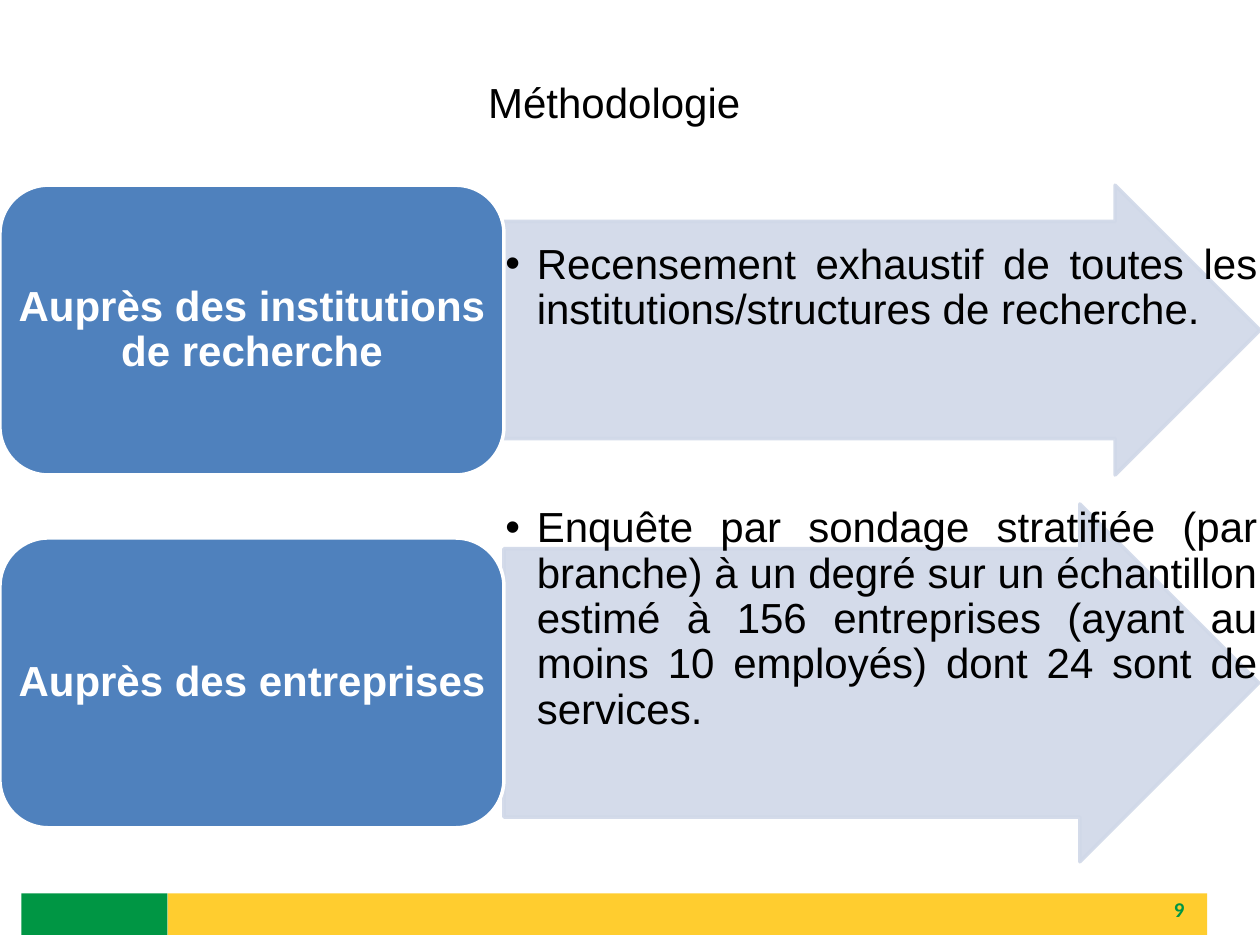
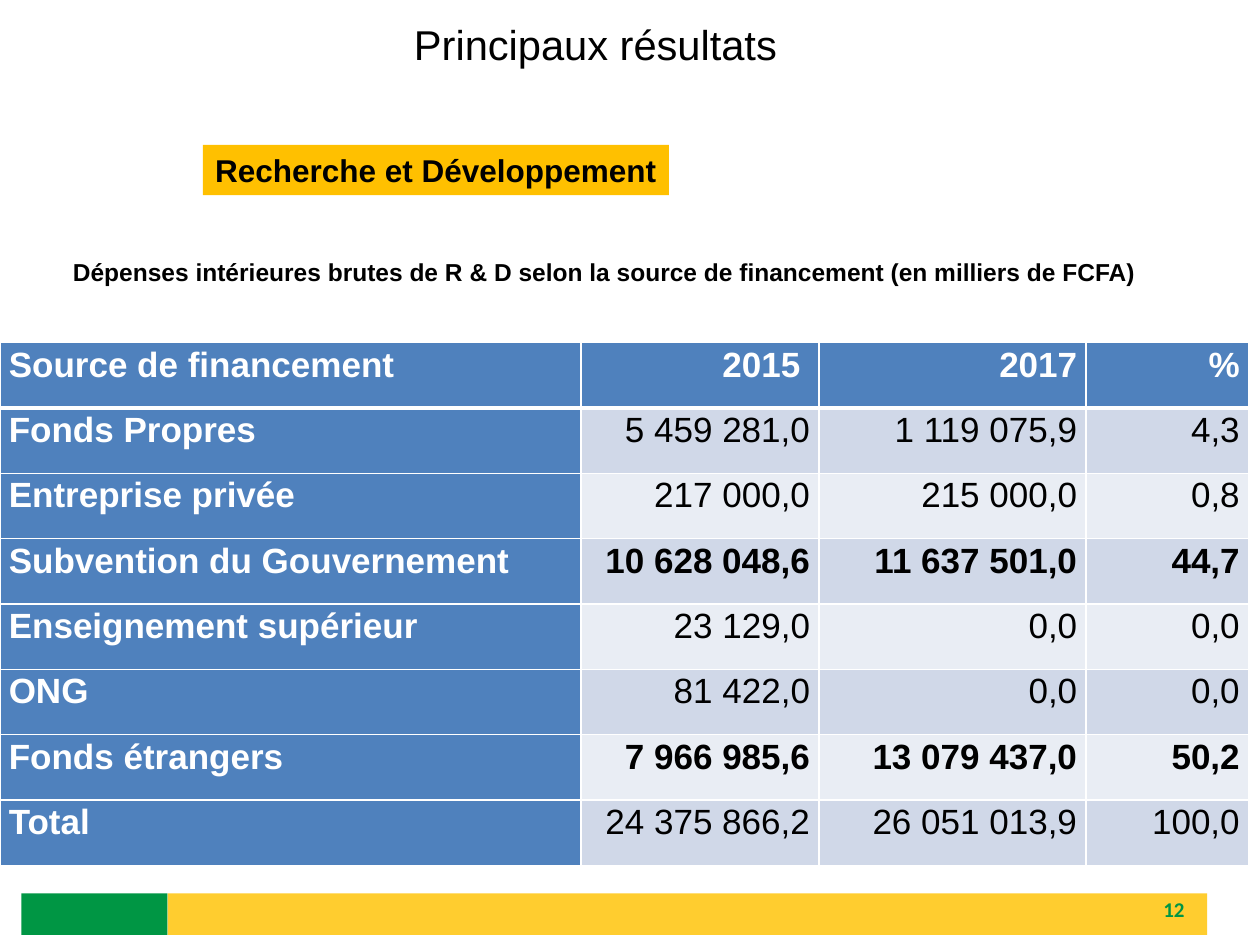
"""Builds two slides on the survey method and on R&D spending by funding source."""
from lxml import etree
from pptx import Presentation
from pptx.dml.color import RGBColor
from pptx.enum.shapes import MSO_SHAPE as SHAPE
from pptx.enum.text import MSO_ANCHOR as ANCHOR, MSO_AUTO_SIZE as AUTO, PP_ALIGN as ALIGN
from pptx.oxml.ns import qn
from pptx.util import Inches, Pt

BLACK, WHITE, BLUE, PALE, PALER = "000000", "FFFFFF", "4F81BD", "D0D8E8", "E9EDF4"
GREEN, YELLOW, AMBER = "009644", "FFCD2F", "FFC000"


def add_shape(s, kind, box, fill, line=None):
    sp = s.shapes.add_shape(kind, *map(Inches, box))
    sp.shadow.inherit = False
    sp.fill.solid()
    sp.fill.fore_color.rgb = RGBColor.from_string(fill)
    if line:
        sp.line.color.rgb = RGBColor.from_string(line)
        sp.line.width = Pt(2)
    else:
        sp.line.fill.background()
    return sp


def write(tf, text, size, color=BLACK, bold=False, font="Arial", anchor=ANCHOR.TOP, inset=None, **para):
    tf.word_wrap = True
    tf.vertical_anchor = anchor
    if inset is not None:
        for side in ("left", "top", "right", "bottom"):
            setattr(tf, f"margin_{side}", Inches(inset))
    p = tf.paragraphs[0]
    for name, value in {"space_before": Pt(0), "alignment": ALIGN.LEFT, **para}.items():
        setattr(p, name, value)
    r = p.add_run()
    r.text = text
    for name, value in {"name": font, "size": Pt(size), "bold": bold}.items():
        setattr(r.font, name, value)
    r.font.color.rgb = RGBColor.from_string(color)


prs = Presentation()
prs.slide_width, prs.slide_height = Inches(10), Inches(7.5)

pages = [
    (3, "9", "Méthodologie", (2.35, 0.6, 5.05, 0.58), 24, 0.9),
    (5, "12", "Principaux résultats", (2.2, 0.21, 5.05, 0.39), 23.8, 0.7),
]
slides = []
for layout, number, title, box, size, spacing in pages:
    s = prs.slides.add_slide(prs.slide_layouts[layout])
    slides.append(s)
    for ph in list(s.placeholders):
        if ph.placeholder_format.idx > 2:
            ph.element.getparent().remove(ph.element)
    add_shape(s, SHAPE.RECTANGLE, (1.33, 7.09, 8.25, 0.33), YELLOW)
    add_shape(s, SHAPE.RECTANGLE, (0.17, 7.09, 1.16, 0.33), GREEN)
    tb = s.shapes.add_textbox(*map(Inches, (7.17, 7.08, 2.33, 0.27)))
    write(tb.text_frame, number, 12, GREEN, True, "Calibri", ANCHOR.MIDDLE, alignment=ALIGN.RIGHT)
    sp = s.shapes.title
    sp.left, sp.top, sp.width, sp.height = map(Inches, box)
    sp.text_frame.auto_size = AUTO.NONE
    write(sp.text_frame, title, size, alignment=ALIGN.CENTER, line_spacing=spacing)

method, results = slides

steps = [
    (1, "Auprès des institutions de recherche", 1.47, (4, 1.47, 6, 2.3), 1.91,
     "Recensement exhaustif de toutes les institutions/structures de recherche."),
    (2, "Auprès des entreprises", 4.27, (4, 4, 5.99, 2.84), 4,
     "Enquête par sondage stratifiée (par branche) à un degré sur un échantillon estimé à "
     "156 entreprises (ayant au moins 10 employés) dont 24 sont de services."),
]
for idx, target, target_top, arrow_box, list_top, detail in steps:
    arrow = add_shape(method, SHAPE.RIGHT_ARROW, arrow_box, PALE, PALE)
    arrow.adjustments[0], arrow.adjustments[1] = 0.75, 0.5
    for clr in arrow.element.spPr.iter(qn("a:srgbClr")):
        etree.SubElement(clr, qn("a:alpha"), val="90000")

    ph = method.placeholders[idx]
    ph.element.getparent().append(ph.element)
    ph.left, ph.top, ph.width, ph.height = map(Inches, (3.99, list_top, 6.01, 1.86))
    ph.text_frame.auto_size = AUTO.NONE
    pPr = ph.text_frame.paragraphs[0]._p.get_or_add_pPr()
    pPr.set("marL", str(Inches(0.25)))
    pPr.set("indent", str(Inches(-0.25)))
    etree.SubElement(pPr, qn("a:buChar"), char="•")
    write(ph.text_frame, detail, 24, inset=0.02, alignment=ALIGN.JUSTIFY, line_spacing=0.9)

    box = (0, target_top, 4, 2.3)
    add_shape(method, SHAPE.ROUNDED_RECTANGLE, box, BLUE, WHITE)
    tb = method.shapes.add_textbox(*map(Inches, box))
    write(tb.text_frame, target, 24, WHITE, True, anchor=ANCHOR.MIDDLE, inset=0.05,
          alignment=ALIGN.CENTER, line_spacing=0.9)

rows = [
    ("Source de financement", "2015 ", "2017", "%"),
    ("Fonds Propres", "5 459 281,0", "1 119 075,9", "4,3"),
    ("Entreprise privée", "217 000,0", "215 000,0", "0,8"),
    ("Subvention du Gouvernement", "10 628 048,6", "11 637 501,0", "44,7"),
    ("Enseignement supérieur", "23 129,0", "0,0", "0,0"),
    ("ONG", "81 422,0", "0,0", "0,0"),
    ("Fonds étrangers", "7 966 985,6", "13 079 437,0", "50,2"),
    ("Total", "24 375 866,2", "26 051 013,9", "100,0"),
]
main_sources = (3, 6)
widths = (4.61, 1.89, 2.12, 1.29)
frame = results.shapes.add_table(len(rows), len(widths), *map(Inches, (0, 2.72, sum(widths), 4.15)))
table = frame.table
table.horz_banding = False
for col, width in zip(table.columns, widths):
    col.width = Inches(width)
for i, row in enumerate(rows):
    for j, text in enumerate(row):
        cell = table.cell(i, j)
        heading = i == 0 or j == 0
        for side, value in {"left": 0.07, "right": 0.07, "top": 0, "bottom": 0}.items():
            setattr(cell, f"margin_{side}", Inches(value))
        tcPr = cell._tc.get_or_add_tcPr()
        for side in "LRTB":
            thick = (i, side) in ((0, "B"), (1, "T"))
            ln = etree.SubElement(tcPr, qn(f"a:ln{side}"), w=str(Pt(3 if thick else 1)))
            etree.SubElement(etree.SubElement(ln, qn("a:solidFill")), qn("a:srgbClr"), val=WHITE)
        cell.fill.solid()
        band = PALE if i % 2 else PALER
        cell.fill.fore_color.rgb = RGBColor.from_string(BLUE if heading else band)
        write(cell.text_frame, text, 20, WHITE if heading else BLACK, heading or i in main_sources,
              alignment=ALIGN.RIGHT if j else ALIGN.LEFT, line_spacing=1.07)

tb = results.shapes.add_textbox(*map(Inches, (0.48, 1.94, 9.52, 0.38)))
write(tb.text_frame, "Dépenses intérieures brutes de R & D selon la source de financement (en milliers de FCFA)",
      14, bold=True, anchor=ANCHOR.BOTTOM)
sp = add_shape(results, SHAPE.RECTANGLE, (1.61, 1.15, 3.7, 0.4), AMBER)
write(sp.text_frame, "Recherche et Développement", 18, bold=True, anchor=ANCHOR.MIDDLE)

prs.save("out.pptx")
